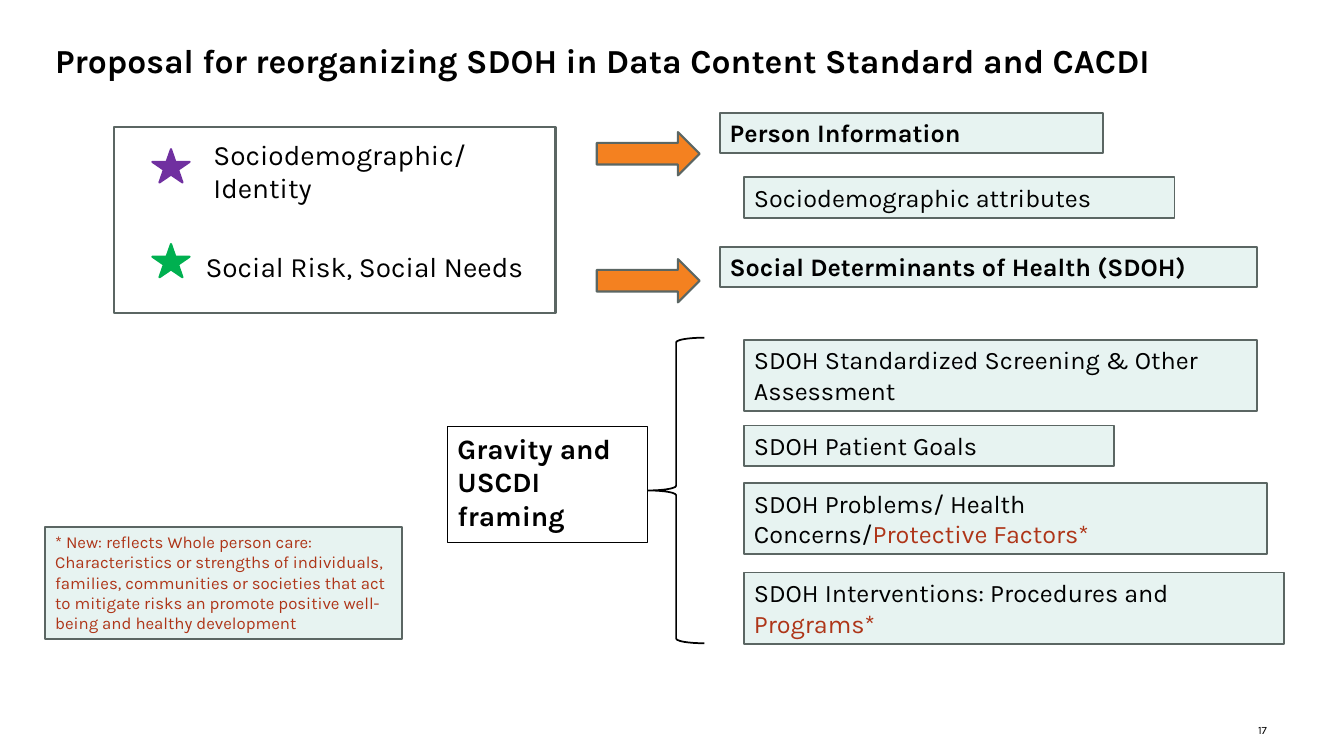
"""Build the slide that proposes a new SDOH grouping."""
from dataclasses import dataclass
from typing import NamedTuple, Optional

from pptx import Presentation
from pptx.dml.color import RGBColor
from pptx.enum.shapes import MSO_SHAPE
from pptx.enum.text import MSO_ANCHOR, PP_ALIGN
from pptx.util import Cm, Pt


@dataclass(frozen=True)
class Theme:
    """Colours, font and type sizes of the slide."""
    font: str = "Karla"
    ink: str = "000000"
    accent: str = "AE3518"
    outline: str = "5B6663"
    panel: str = "E7F3F1"
    arrow: str = "F48120"
    identity: str = "7030A0"
    risk: str = "00B050"
    title_size: int = 24
    label_size: int = 20
    item_size: int = 18
    note_size: int = 12
    page_size: int = 8


class Box(NamedTuple):
    """A place on the slide in centimetres."""
    left: float
    top: float
    width: float
    height: float


class Category(NamedTuple):
    """A category panel, with an optional highlighted ending."""
    text: str
    top: float
    width: float
    new_part: str = ""
    heading: bool = False
    lines: int = 1


class Topic(NamedTuple):
    """A starred topic and the arrow that leads from it."""
    text: str
    color: str
    star_top: float
    text_left: float
    text_top: float
    text_height: float
    arrow_top: float


THEME = Theme()
HEADING_LEFT, ITEM_LEFT = 18.14, 18.75
PANEL_HEIGHTS = {1: 1.02, 2: 1.8}

TOPICS = [
    Topic("Sociodemographic/ Identity", THEME.identity, 3.76, 5.13, 3.33, 1.47, 3.33),
    Topic("Social Risk, Social Needs", THEME.risk, 6.15, 4.93, 6.15, 0.84, 6.53),
]
CATEGORIES = [
    Category("Person Information", 2.84, 9.65, heading=True),
    Category("Sociodemographic attributes", 4.47, 10.85),
    Category("Social Determinants of Health (SDOH)", 6.22, 13.54, heading=True),
    Category("SDOH Standardized Screening & Other Assessment", 8.56, 12.93, lines=2),
    Category("SDOH Patient Goals", 10.72, 9.32),
    Category("SDOH Problems/ Health Concerns/", 12.17, 13.18, "Protective Factors*", lines=2),
    Category("SDOH Interventions: Procedures and ", 14.43, 13.61, "Programs*", lines=2),
]
NOTE = (
    "* New: reflects Whole person care: Characteristics or strengths of individuals, "
    "families, communities or societies that act to mitigate risks an promote positive "
    "well-being and healthy development"
)


def place(box: Box) -> tuple:
    """Return a box as slide lengths."""
    return tuple(Cm(length) for length in box)


def write(shape, text: str, size: int, color: str = THEME.ink, bold: bool = False,
          new_part: str = "") -> None:
    """Write one wrapped paragraph, with an optional accented ending."""
    frame = shape.text_frame
    frame.word_wrap = True
    frame.vertical_anchor = MSO_ANCHOR.TOP
    paragraph = frame.paragraphs[0]
    paragraph.alignment = PP_ALIGN.LEFT
    paragraph.font.name = THEME.font
    paragraph.font.size = Pt(size)
    paragraph.font.bold = bold
    parts = [(text, color)] + ([(new_part, THEME.accent)] if new_part else [])
    for words, part_color in parts:
        run = paragraph.add_run()
        run.text = words
        run.font.color.rgb = RGBColor.from_string(part_color)


def add_figure(slide, kind: MSO_SHAPE, box: Box, fill: Optional[str] = None,
               line: str = THEME.outline, line_width: float = 1.25):
    """Add a flat preset shape."""
    figure = slide.shapes.add_shape(kind, *place(box))
    figure.shadow.inherit = False
    if fill:
        figure.fill.solid()
        figure.fill.fore_color.rgb = RGBColor.from_string(fill)
    else:
        figure.fill.background()
    figure.line.color.rgb = RGBColor.from_string(line)
    figure.line.width = Pt(line_width)
    return figure


def add_label(slide, box: Box, text: str, size: int, bold: bool = False):
    """Add a text box."""
    label = slide.shapes.add_textbox(*place(box))
    write(label, text, size, bold=bold)
    return label


def add_topic(slide, topic: Topic) -> None:
    """Add a star, its label and its arrow."""
    add_figure(slide, MSO_SHAPE.STAR_5_POINT, Box(3.84, topic.star_top, 0.94, 0.84),
               topic.color, topic.color, 1.5)
    add_label(slide, Box(topic.text_left, topic.text_top, 8.86, topic.text_height),
              topic.text, THEME.label_size)
    add_figure(slide, MSO_SHAPE.RIGHT_ARROW, Box(15.04, topic.arrow_top, 2.59, 1.09),
               THEME.arrow, line_width=1.5)


def add_category(slide, category: Category) -> None:
    """Add a category panel."""
    left = HEADING_LEFT if category.heading else ITEM_LEFT
    box = Box(left, category.top, category.width, PANEL_HEIGHTS[category.lines])
    panel = add_figure(slide, MSO_SHAPE.RECTANGLE, box, THEME.panel)
    write(panel, category.text, THEME.item_size, bold=category.heading,
          new_part=category.new_part)


def add_page_number(slide, number: str) -> None:
    """Add the page number at the bottom right."""
    page = add_label(slide, Box(30.33, 18.24, 1.6, 0.33), number, THEME.page_size)
    frame = page.text_frame
    frame.margin_left = frame.margin_right = frame.margin_top = frame.margin_bottom = 0
    frame.vertical_anchor = MSO_ANCHOR.MIDDLE
    frame.paragraphs[0].alignment = PP_ALIGN.RIGHT


def main() -> None:
    """Build and save the slide."""
    presentation = Presentation()
    presentation.slide_width, presentation.slide_height = Cm(33.87), Cm(19.05)
    slide = presentation.slides.add_slide(presentation.slide_layouts[6])

    add_page_number(slide, "17")
    add_label(slide, Box(1.14, 0.89, 29.72, 1.27),
              "Proposal for reorganizing SDOH in Data Content Standard and CACDI",
              THEME.title_size, bold=True)
    for topic in TOPICS:
        add_topic(slide, topic)
    add_figure(slide, MSO_SHAPE.RECTANGLE, Box(2.87, 3.2, 11.13, 4.7), line_width=1.5)
    for category in CATEGORIES:
        add_category(slide, category)

    add_figure(slide, MSO_SHAPE.LEFT_BRACE, Box(16.33, 8.51, 1.42, 7.7), line=THEME.ink)
    framing = add_figure(slide, MSO_SHAPE.RECTANGLE, Box(11.28, 10.74, 5.05, 2.92),
                         line=THEME.ink, line_width=0.75)
    write(framing, "Gravity and USCDI framing", THEME.label_size, bold=True)
    note = add_figure(slide, MSO_SHAPE.RECTANGLE, Box(1.14, 13.28, 8.99, 2.82), THEME.panel)
    write(note, NOTE, THEME.note_size, THEME.accent)
    presentation.save("out.pptx")


if __name__ == "__main__":
    main()
